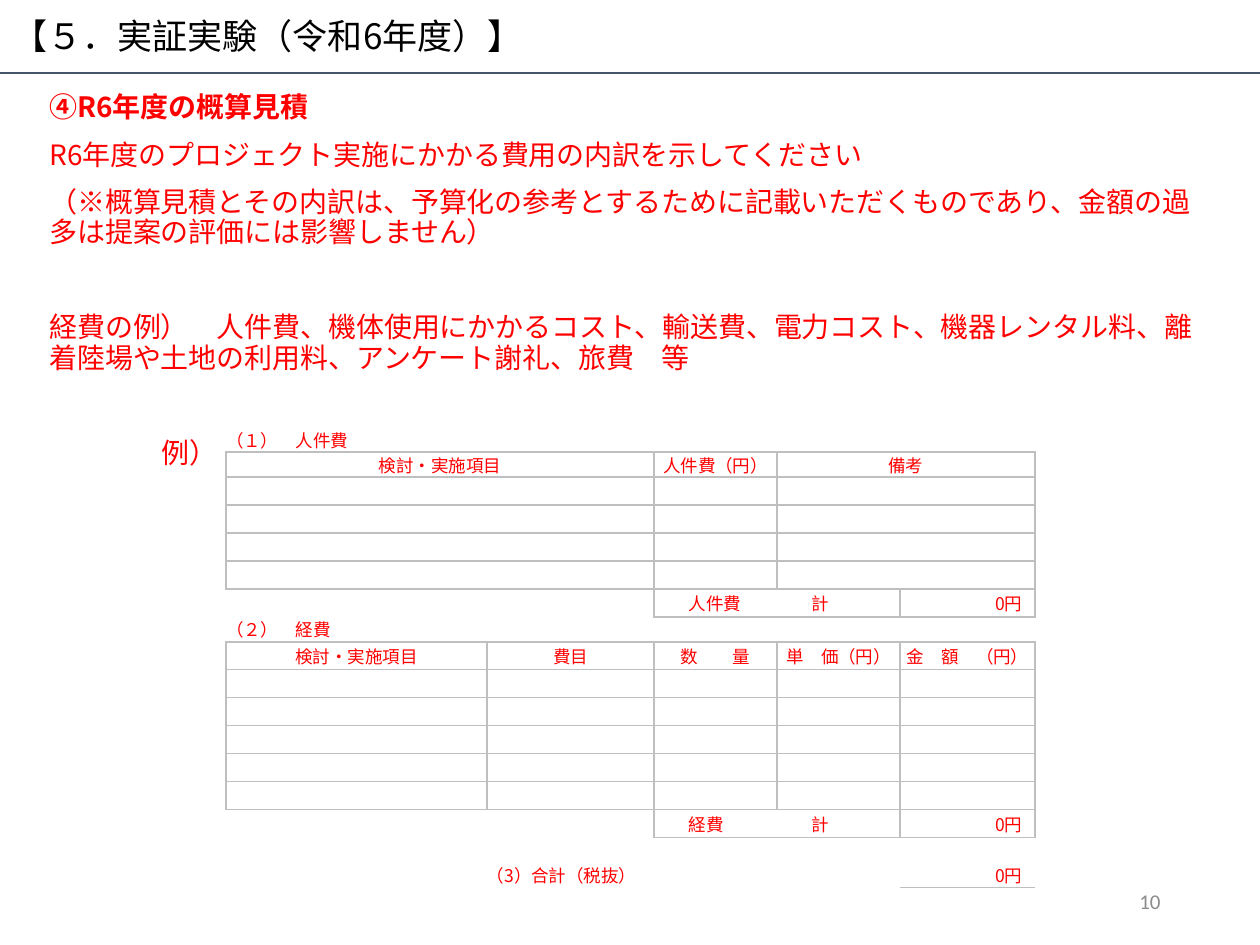
from lxml import etree
from pptx import Presentation
from pptx import util as u
from pptx.dml.color import RGBColor
from pptx.enum import shapes, text
from pptx.oxml import ns

PX = 914400 / 126
CJK = "Noto Sans CJK JP"
RED, GREY = "FF0000", "BFBFBF"
LEFT, MID, RIGHT = text.PP_ALIGN.LEFT, text.PP_ALIGN.CENTER, text.PP_ALIGN.RIGHT

TITLE = "【５．実証実験（令和6年度）】"
# text, bold, space before in points, indent in px
BODY = [
    ("④R6年度の概算見積", True, 10, 0),
    ("R6年度のプロジェクト実施にかかる費用の内訳を示してください", False, 10, 0),
    ("（※概算見積とその内訳は、予算化の参考とするために記載いただくものであり、"
     "金額の過多は提案の評価には影響しません）", False, 10, 0),
    ("経費の例）　人件費、機体使用にかかるコスト、輸送費、電力コスト、機器レンタル料、"
     "離着陸場や土地の利用料、アンケート謝礼、旅費　等", False, 37, 0),
    ("例）", False, 37, 112),
]

COLS = [261, 167, 123, 123, 69, 66]
LOW, HIGH = 25, 28
STAFF = [(0, 2), (2, 1), (3, 3)]            # first column, span
COST = [(0, 1), (1, 1), (2, 1), (3, 1), (4, 2)]
SUM = [(2, 2), (4, 2)]


def row(high, spans=(), words=(), align=MID, edge="box"):
    words = list(words) or [""] * len(spans)
    return high, [(c, n, w, align, edge) for (c, n), w in zip(spans, words)]


def total(name):
    (c, n), (c2, n2) = SUM
    return HIGH, [(c, n, name + "\t計", LEFT, "box"), (c2, n2, "0円", RIGHT, "box")]


ROWS = [
    row(LOW, [(0, 1)], ["（１）　人件費"], LEFT, ""),
    row(LOW, STAFF, ["検討・実施項目", "人件費（円）", "備考"]),
    *[row(HIGH, STAFF) for _ in range(4)],
    total("人件費"),
    row(LOW, [(0, 1)], ["（２）　経費"], LEFT, ""),
    row(HIGH, COST, ["検討・実施項目", "費目", "数　　量", "単　価（円）", "金　額　（円）"]),
    *[row(HIGH, COST) for _ in range(5)],
    total("経費"),
    row(LOW),
    (LOW, [(1, 1, "（3）合計（税抜）", LEFT, ""), (4, 2, "0円", RIGHT, "base")]),
]


def px(n):
    return u.Emu(round(n * PX))


def hue(code):
    return RGBColor.from_string(code)


def write(para, words, size, color=RED, face=CJK, bold=False):
    run = para.add_run()
    run.text = words
    font = run.font
    font.size, font.bold, font.name = u.Pt(size), bold, face
    font.color.rgb = hue(color)
    etree.SubElement(run._r.get_or_add_rPr(), ns.qn("a:ea"), typeface=face)


def box(slide, x, y, w, h, anchor=text.MSO_ANCHOR.MIDDLE):
    frame = slide.shapes.add_textbox(px(x), px(y), px(w), px(h)).text_frame
    frame.word_wrap = True
    frame.vertical_anchor = anchor
    return frame


def find_edges():
    """Grid edges that carry a line, as (direction, row, column)."""
    edges = set()
    for r, (_, cells) in enumerate(ROWS):
        for c, n, _, _, edge in cells:
            for k in range(c, c + n):
                if edge:
                    edges.add(("h", r + 1, k))
                if edge == "box":
                    edges.add(("h", r, k))
            if edge == "box":
                edges |= {("v", r, c), ("v", r, c + n)}
    return edges


def rule(cell, tag, drawn):
    props = cell._tc.get_or_add_tcPr()
    line = etree.SubElement(props, ns.qn("a:" + tag), w=str(u.Pt(1) if drawn else 0))
    if drawn:
        fill = etree.SubElement(line, ns.qn("a:solidFill"))
        etree.SubElement(fill, ns.qn("a:srgbClr"), val=GREY)
    else:
        etree.SubElement(line, ns.qn("a:noFill"))


def fill_cell(cell, words, align):
    para = cell.text_frame.paragraphs[0]
    para.alignment = align
    if words:
        write(para, words, 10)
    else:
        etree.SubElement(para._p, ns.qn("a:endParaRPr"), sz="1000")
    if align == RIGHT:
        cell.margin_right = u.Inches(0.1)
    if "\t" in words:
        cell.margin_left = u.Pt(20)
        tabs = etree.SubElement(para._p.get_or_add_pPr(), ns.qn("a:tabLst"))
        etree.SubElement(tabs, ns.qn("a:tab"), pos=str(u.Pt(70)), algn="l")


def add_costs(slide):
    highs = [high for high, _ in ROWS]
    table = slide.shapes.add_table(len(ROWS), len(COLS), px(226), px(427),
                                   px(sum(COLS)), px(sum(highs))).table
    table.first_row = table.horz_banding = False
    style = table._tbl.tblPr.find(ns.qn("a:tableStyleId"))
    style.text = "{2D5ABB26-0587-4C30-8999-92F81FD0307C}"
    for col, wide in zip(table.columns, COLS):
        col.width = px(wide)
    edges = find_edges()
    for r, (high, cells) in enumerate(ROWS):
        table.rows[r].height = px(high)
        known = {c: (n, words, align) for c, n, words, align, _ in cells}
        for c in range(len(COLS)):
            cell = table.cell(r, c)
            n, words, align = known.get(c, (1, "", LEFT))
            cell.margin_left = cell.margin_right = 0
            cell.margin_top = cell.margin_bottom = 0
            cell.vertical_anchor = text.MSO_ANCHOR.MIDDLE
            for tag, key in (("lnL", ("v", r, c)), ("lnR", ("v", r, c + n)),
                             ("lnT", ("h", r, c)), ("lnB", ("h", r + 1, c))):
                rule(cell, tag, key in edges)
            cell.fill.background()
            fill_cell(cell, words, align)
            if n > 1:
                cell.merge(table.cell(r, c + n - 1))


def main():
    deck = Presentation()
    deck.slide_width, deck.slide_height = px(1260), px(945)
    slide = deck.slides.add_slide(deck.slide_layouts[6])

    head = box(slide, 0, 0, 1260, 77).paragraphs[0]
    head.line_spacing = 0.9
    write(head, TITLE, 20, "000000")

    body = box(slide, 37, 87, 1189, 757, text.MSO_ANCHOR.TOP)
    for i, (words, bold, gap, indent) in enumerate(BODY):
        para = body.add_paragraph() if i else body.paragraphs[0]
        para.line_spacing, para.space_before = 0.9, u.Pt(gap)
        if indent:
            para._p.get_or_add_pPr().set("marL", str(px(indent)))
        write(para, words, 16, bold=bold)

    line = slide.shapes.add_connector(shapes.MSO_CONNECTOR.STRAIGHT,
                                      px(0), px(73), px(1260), px(73))
    line.line.color.rgb, line.line.width = hue("44546A"), u.Pt(1.5)
    etree.SubElement(line._element.spPr, ns.qn("a:effectLst"))

    page = box(slide, 890, 876, 283, 50).paragraphs[0]
    page.alignment = RIGHT
    write(page, "10", 12, "8C8C8C", "Calibri")

    add_costs(slide)
    deck.save("out.pptx")


if __name__ == "__main__":
    main()
